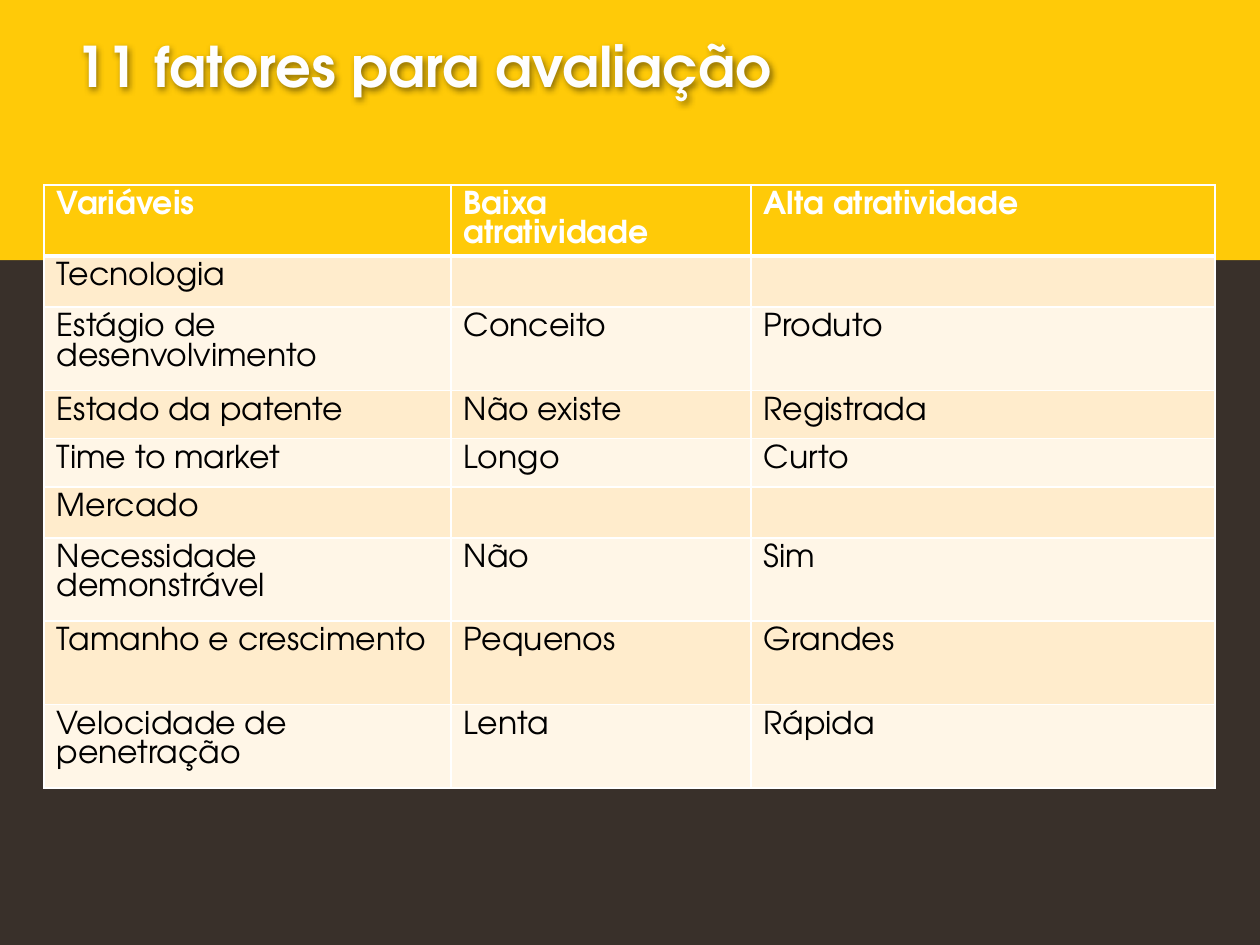
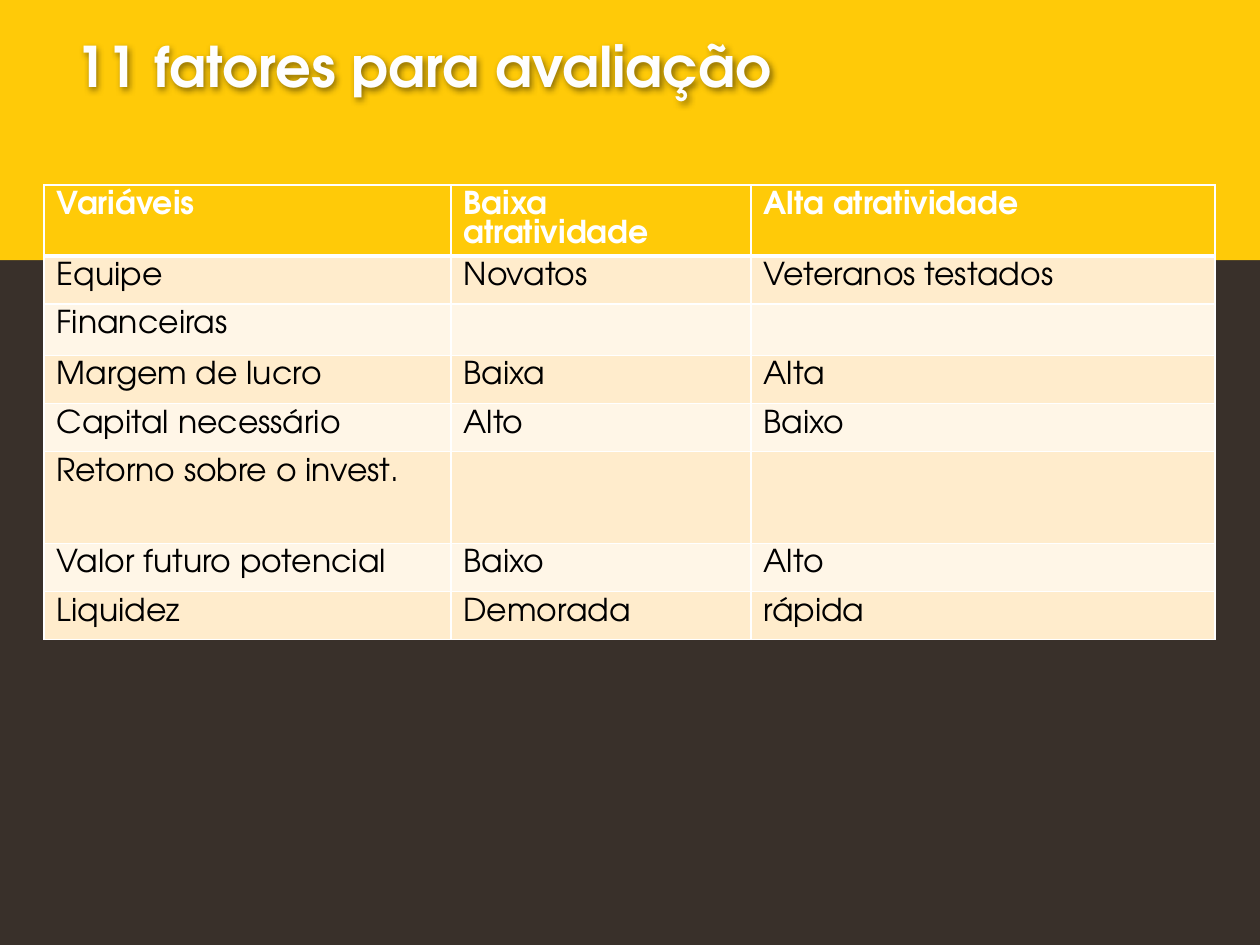
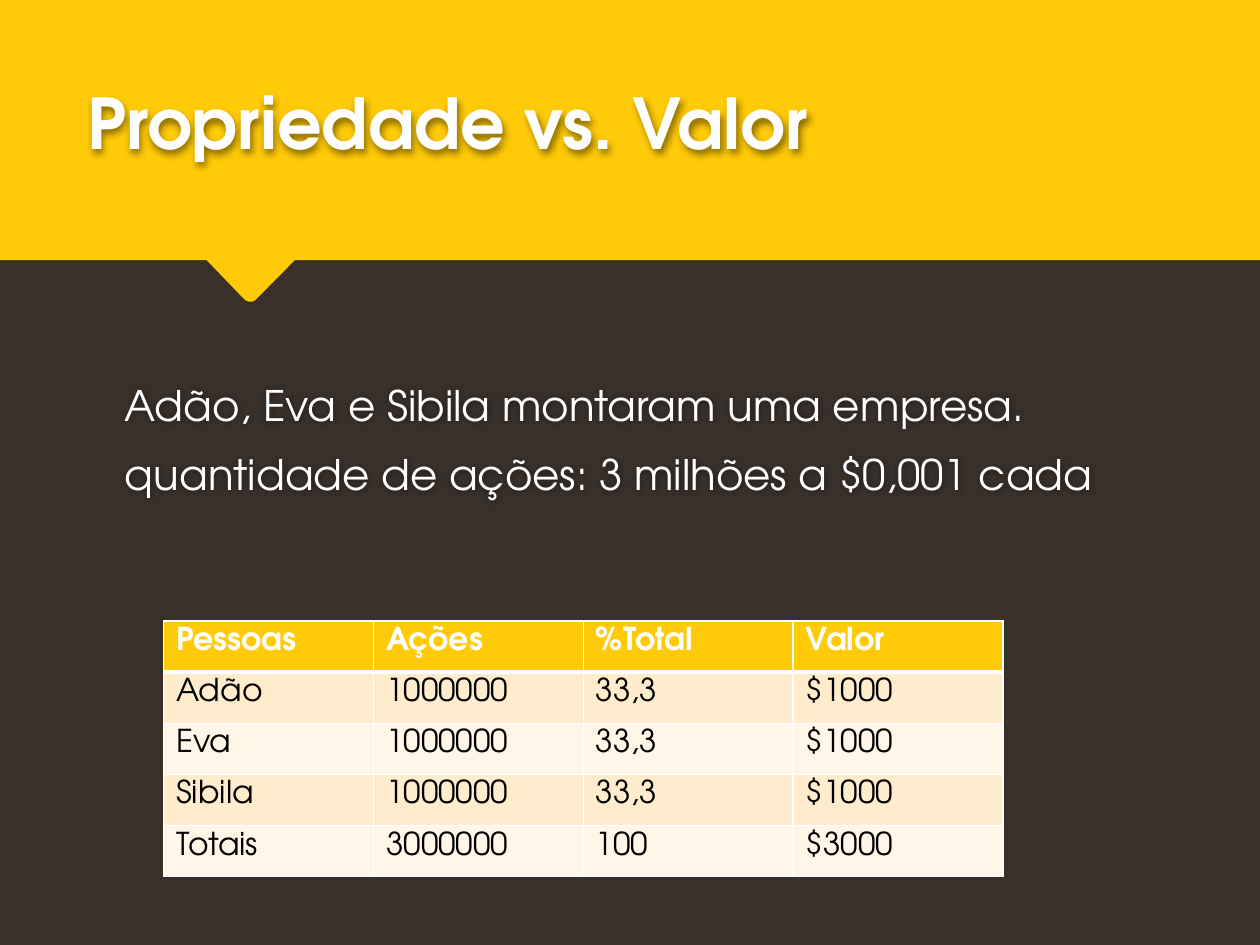
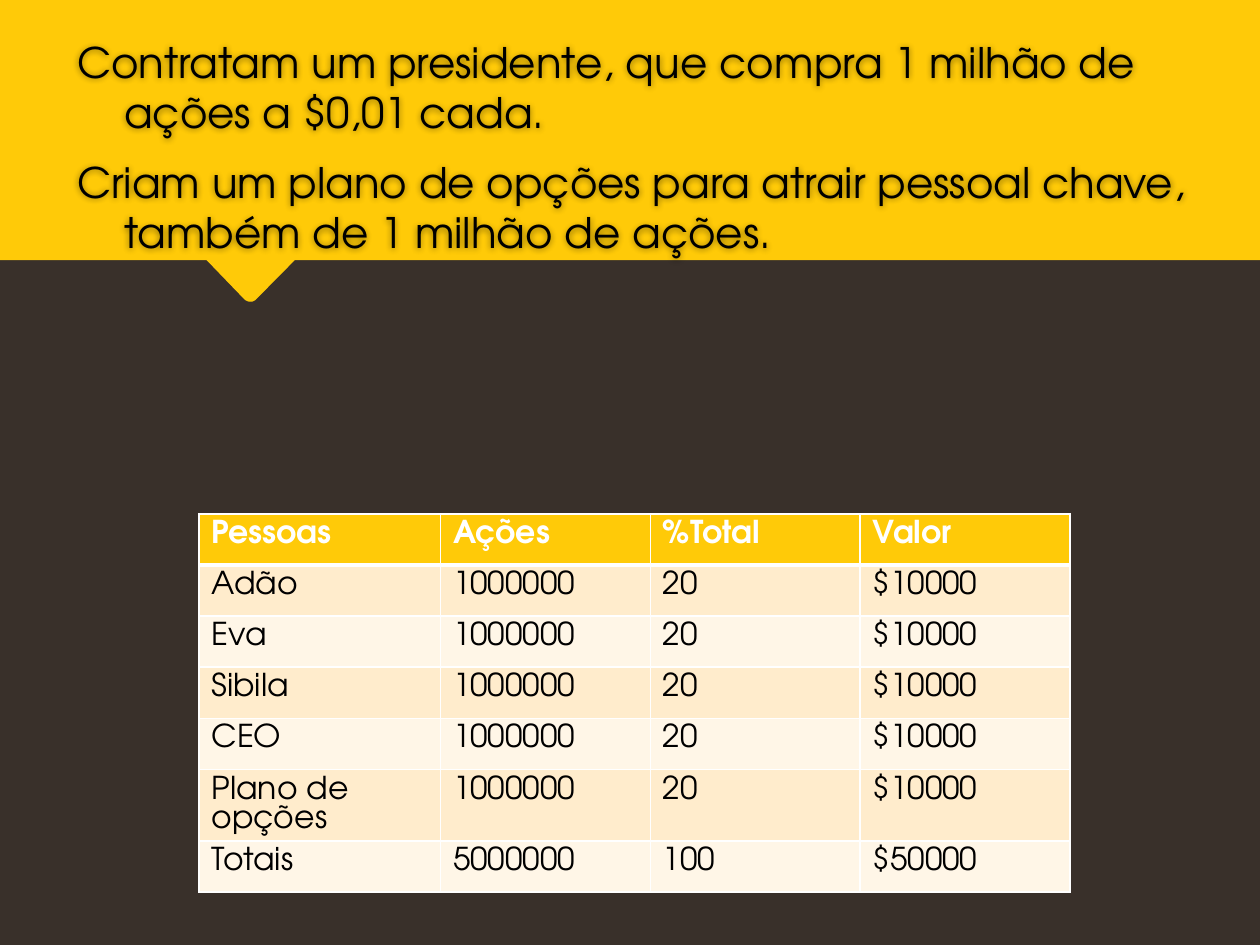
from dataclasses import dataclass

from lxml import etree
from pptx import Presentation
from pptx.dml.color import RGBColor
from pptx.enum.text import MSO_ANCHOR, MSO_AUTO_SIZE, PP_ALIGN
from pptx.oxml.ns import qn
from pptx.util import Cm, Pt

BOTTOM = MSO_ANCHOR.BOTTOM
MIDDLE = MSO_ANCHOR.MIDDLE
TOP = MSO_ANCHOR.TOP
LEFT = PP_ALIGN.LEFT
NO_FIT = MSO_AUTO_SIZE.NONE

TITLE_AND_BODY = 1
TITLE_ONLY = 5

ROW = 0.97
TALL_ROW = 1.03
WRAPPED_ROW = 1.42
DOUBLE_ROW = 1.68
SHARE_COLUMN = 4.23


@dataclass(frozen=True)
class Theme:
    font: str = "TeX Gyre Adventor"
    ground: str = "39302A"
    accent: str = "FFCA08"
    title: str = "FEFEFE"
    light: str = "FFFFFF"
    dark: str = "000000"
    odd_row: str = "FFECCC"
    even_row: str = "FFF6E7"
    title_size: int = 40
    compact_title_size: int = 32
    body_size: int = 24
    table_size: int = 18


class Deck:
    def __init__(self, theme):
        self.theme = theme
        self.presentation = Presentation()
        self.presentation.slide_width = Cm(25.4)
        self.presentation.slide_height = Cm(19.05)
        self.slide = None
        ground = self.presentation.slide_master.background.fill
        ground.solid()
        ground.fore_color.rgb = RGBColor.from_string(theme.ground)

    def open_slide(self, layout):
        layouts = self.presentation.slide_layouts
        self.slide = self.presentation.slides.add_slide(layouts[layout])

    def share_band(self):
        outline = [(0, 0), (0, 5.23), (4.17, 5.23), (4.95, 6.04), (5.02, 6.07),
                   (5.08, 6.07), (5.14, 6.04), (5.94, 5.23), (25.4, 5.23)]
        builder = self.slide.shapes.build_freeform(Cm(25.4), 0)
        builder.add_line_segments([(Cm(x), Cm(y)) for x, y in outline], close=True)
        band = builder.convert_to_shape()
        accent = RGBColor.from_string(self.theme.accent)
        band.fill.solid()
        band.fill.fore_color.rgb = accent
        band.line.color.rgb = accent
        band.line.width = Pt(0.75)
        band.shadow.inherit = False
        self.presentation.slide_master.shapes.element.insert(2, band.element)

    def style(self, paragraph, size, color, bold=False):
        for run in paragraph.runs:
            run.font.name = self.theme.font
            run.font.size = Pt(size)
            run.font.bold = bold
            run.font.color.rgb = RGBColor.from_string(color)

    def place(self, holder, box, anchor):
        holder.left, holder.top, holder.width, holder.height = map(Cm, box)
        frame = holder.text_frame
        frame.word_wrap = True
        frame.auto_size = NO_FIT
        frame.vertical_anchor = anchor
        return frame

    def soften(self, holder, distance):
        effects = etree.SubElement(holder.element.spPr, qn("a:effectLst"))
        shadow = etree.SubElement(effects, qn("a:outerShdw"), blurRad="50800",
                                  dist=str(Pt(distance)), dir="4200000", algn="tl",
                                  rotWithShape="0")
        black = etree.SubElement(shadow, qn("a:srgbClr"), val=self.theme.dark)
        etree.SubElement(black, qn("a:alpha"), val="45000")

    def title(self, text, box, size):
        holder = self.slide.shapes.title
        frame = self.place(holder, box, BOTTOM)
        frame.text = text
        frame.paragraphs[0].alignment = LEFT
        self.style(frame.paragraphs[0], size, self.theme.title, bold=True)
        self.soften(holder, 1.5)

    def drop_title(self):
        heading = self.slide.shapes.title.element
        heading.getparent().remove(heading)

    def body(self, lines, box, color):
        holder = self.slide.placeholders[1]
        frame = self.place(holder, box, MIDDLE)
        frame.text = "\n".join(lines)
        size = self.theme.body_size
        for index, paragraph in enumerate(frame.paragraphs):
            paragraph.alignment = LEFT
            paragraph.space_before = Pt(0.2 * size if index else 0)
            paragraph.space_after = Pt(6)
            properties = paragraph._p.get_or_add_pPr()
            properties.set("marL", str(Cm(0.95)))
            properties.set("indent", str(-Cm(0.95)))
            etree.SubElement(properties, qn("a:buNone"))
            self.style(paragraph, size, color)
        self.soften(holder, 0.5)

    def borders(self, cell, top, bottom):
        properties = cell._tc.get_or_add_tcPr()
        sides = (("lnL", 1), ("lnR", 1), ("lnT", top), ("lnB", bottom))
        for index, (side, width) in enumerate(sides):
            line = etree.Element(qn(f"a:{side}"), w=str(Pt(width)))
            fill = etree.SubElement(line, qn("a:solidFill"))
            etree.SubElement(fill, qn("a:srgbClr"), val=self.theme.light)
            properties.insert(index, line)

    def table(self, left, top, widths, heights, rows):
        theme = self.theme
        grid = self.slide.shapes.add_table(
            len(rows), len(widths), Cm(left), Cm(top),
            Cm(sum(widths)), Cm(sum(heights))).table
        for column, width in zip(grid.columns, widths):
            column.width = Cm(width)
        for index, (row, height, texts) in enumerate(zip(grid.rows, heights, rows)):
            row.height = Cm(height)
            header = index == 0
            shade = theme.accent if header else (theme.even_row, theme.odd_row)[index % 2]
            for cell, text in zip(row.cells, texts):
                cell.fill.solid()
                cell.fill.fore_color.rgb = RGBColor.from_string(shade)
                cell.vertical_anchor = TOP
                cell.text_frame.text = text
                self.style(cell.text_frame.paragraphs[0], theme.table_size,
                           theme.light if header else theme.dark, bold=header)
                self.borders(cell, 3 if index == 1 else 1, 3 if header else 1)

    def factors(self, heights, rows):
        self.title("11 fatores para avaliação", (1.27, 0, 22.86, 2.11),
                   self.theme.compact_title_size)
        header = ("Variáveis", "Baixa atratividade", "Alta atratividade")
        self.table(0.89, 3.73, (8.2, 6.05, 9.35), (WRAPPED_ROW, *heights), (header, *rows))

    def shares(self, left, top, first_width, heights, rows):
        header = ("Pessoas", "Ações", "%Total", "Valor")
        self.table(left, top, (first_width, *[SHARE_COLUMN] * 3), heights, (header, *rows))


def main():
    theme = Theme()
    deck = Deck(theme)

    deck.open_slide(TITLE_ONLY)
    deck.share_band()
    deck.factors(
        (TALL_ROW, DOUBLE_ROW, ROW, ROW, TALL_ROW, DOUBLE_ROW, DOUBLE_ROW, DOUBLE_ROW),
        (("Tecnologia", "", ""),
         ("Estágio de desenvolvimento", "Conceito", "Produto"),
         ("Estado da patente", "Não existe", "Registrada"),
         ("Time to market", "Longo", "Curto"),
         ("Mercado", "", ""),
         ("Necessidade demonstrável", "Não", "Sim"),
         ("Tamanho e crescimento", "Pequenos", "Grandes"),
         ("Velocidade de penetração", "Lenta", "Rápida")))

    deck.open_slide(TITLE_ONLY)
    deck.factors(
        (ROW, TALL_ROW, ROW, ROW, 1.85, ROW, ROW),
        (("Equipe", "Novatos", "Veteranos testados"),
         ("Financeiras", "", ""),
         ("Margem de lucro", "Baixa", "Alta"),
         ("Capital necessário", "Alto", "Baixo"),
         ("Retorno sobre o invest.", "", ""),
         ("Valor futuro potencial", "Baixo", "Alto"),
         ("Liquidez", "Demorada", "rápida")))

    deck.open_slide(TITLE_AND_BODY)
    deck.title("Propriedade vs. Valor", (1.5, 0.74, 20.9, 2.69), theme.title_size)
    deck.body(("Adão, Eva e Sibila montaram uma empresa.",
               "quantidade de ações: 3 milhões a $0,001 cada"),
              (2.26, 6.17, 20.9, 5.36), theme.light)
    founders = ("Adão", "Eva", "Sibila")
    deck.shares(3.3, 12.52, SHARE_COLUMN, [TALL_ROW] * 5,
                [(name, "1000000", "33,3", "$1000") for name in founders]
                + [("Totais", "3000000", "100", "$3000")])

    deck.open_slide(TITLE_AND_BODY)
    deck.drop_title()
    deck.body(("Contratam um presidente, que compra 1 milhão de ações a $0,01 cada.",
               "Criam um plano de opções para atrair pessoal chave, "
               "também de 1 milhão de ações."),
              (1.3, 0, 22.9, 5.92), theme.dark)
    holders = (*founders, "CEO", "Plano de opções")
    deck.shares(4.01, 10.36, 4.87, [TALL_ROW] * 5 + [WRAPPED_ROW, TALL_ROW],
                [(name, "1000000", "20", "$10000") for name in holders]
                + [("Totais", "5000000", "100", "$50000")])

    deck.presentation.save("out.pptx")


if __name__ == "__main__":
    main()
